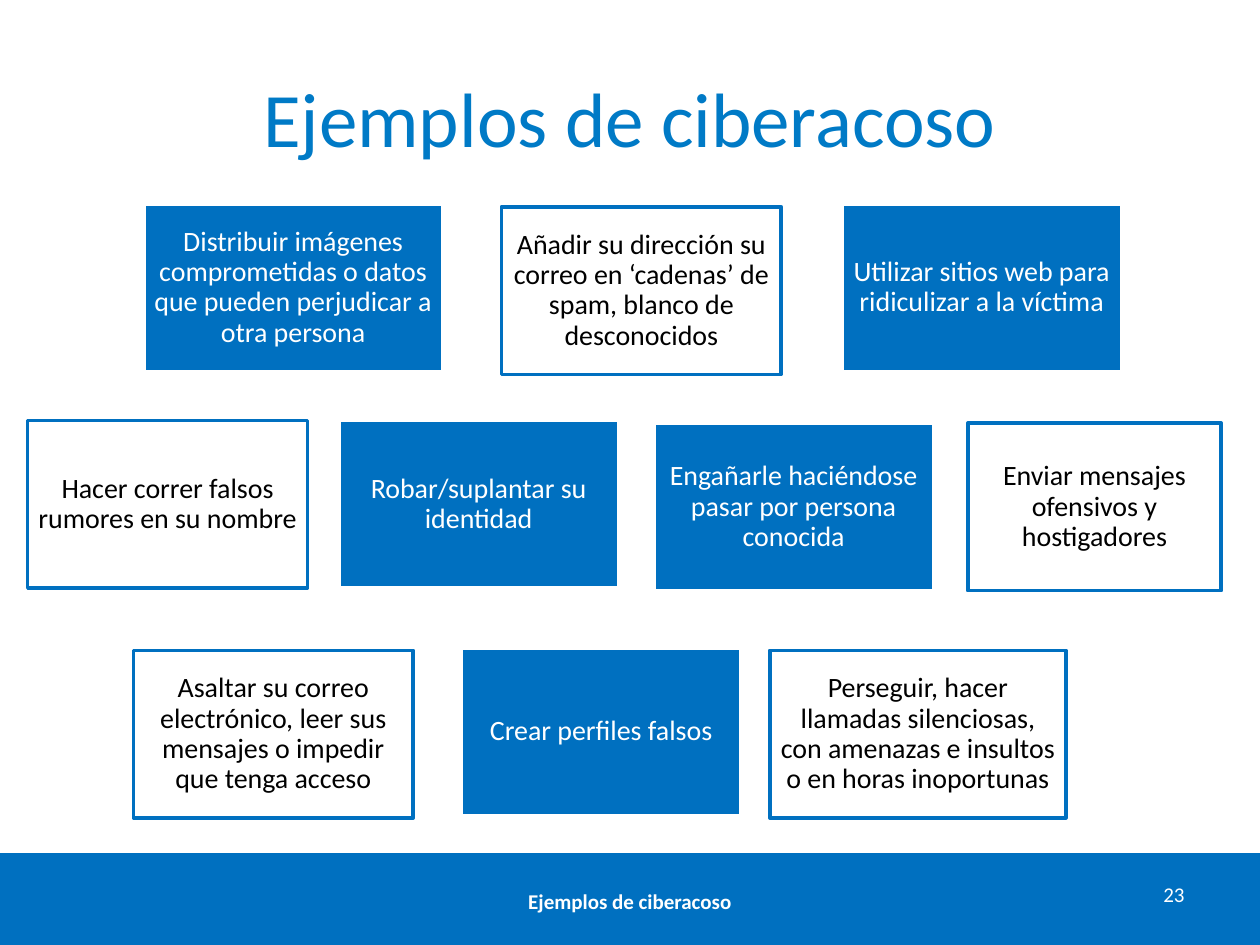
from pptx import Presentation
from pptx.dml.color import RGBColor
from pptx.enum.shapes import MSO_SHAPE as Shape
from pptx.enum.text import MSO_ANCHOR as Anchor, PP_ALIGN as Align
from pptx.util import Cm, Pt

COLORS = {"blue": "0070C0", "title": "007AC6", "white": "FFFFFF", "black": "000000"}
FONT = "Calibri"
CARD_HEIGHT = 3.38
CARD_WIDTH = 5.64

# Each card: left, top, width (cm), filled, text
CARDS = [
    (2.9, 4.11, 6.02, True,
     "Distribuir imágenes comprometidas o datos que pueden perjudicar a otra persona"),
    (10.11, 4.17, CARD_WIDTH, False,
     "Añadir su dirección su correo en ‘cadenas’ de spam, blanco de desconocidos"),
    (16.97, 4.11, CARD_WIDTH, True, "Utilizar sitios web para ridiculizar a la víctima"),
    (0.56, 8.48, CARD_WIDTH, False, "Hacer correr falsos rumores en su nombre"),
    (6.83, 8.48, CARD_WIDTH, True, "Robar/suplantar su identidad"),
    (13.18, 8.53, CARD_WIDTH, True, "Engañarle haciéndose pasar por persona conocida"),
    (19.51, 8.53, 5.11, False, "Enviar mensajes ofensivos y hostigadores"),
    (2.69, 13.11, CARD_WIDTH, False,
     "Asaltar su correo electrónico, leer sus mensajes o impedir que tenga acceso"),
    (9.3, 13.06, CARD_WIDTH, True, "Crear perfiles falsos"),
    (15.52, 13.11, 5.97, False,
     "Perseguir, hacer llamadas silenciosas, con amenazas e insultos o en horas inoportunas"),
]


def rgb(name):
    return RGBColor.from_string(COLORS[name])


def write(shape, text, size=16, color="white", bold=False, align=Align.CENTER,
          anchor=Anchor.MIDDLE, spacing=None, inset=None):
    frame = shape.text_frame
    frame.word_wrap = True
    frame.vertical_anchor = anchor
    if inset is not None:
        frame.margin_left = frame.margin_right = Cm(inset)
        frame.margin_top = frame.margin_bottom = Cm(inset)
    paragraph = frame.paragraphs[0]
    paragraph.text = text
    paragraph.alignment = align
    if spacing:
        paragraph.line_spacing = spacing
    font = paragraph.font
    font.name, font.size, font.bold = FONT, Pt(size), bold
    font.color.rgb = rgb(color)


def add_label(slide, left, top, width, height, text, **style):
    label = slide.shapes.add_textbox(Cm(left), Cm(top), Cm(width), Cm(height))
    write(label, text, **style)


def add_box(slide, left, top, width, height, fill, line=None):
    box = slide.shapes.add_shape(Shape.RECTANGLE, Cm(left), Cm(top), Cm(width), Cm(height))
    box.shadow.inherit = False
    box.fill.solid()
    box.fill.fore_color.rgb = rgb(fill)
    if line:
        box.line.color.rgb = rgb(line)
        box.line.width = Pt(2)
    else:
        box.line.fill.background()
    return box


def add_card(slide, left, top, width, filled, text):
    fill, line, color = ("blue", "white", "white") if filled else ("white", "blue", "black")
    card = add_box(slide, left, top, width, CARD_HEIGHT, fill, line)
    write(card, text, color=color, spacing=0.9, inset=0.15)


def main():
    deck = Presentation()
    deck.slide_width, deck.slide_height = Cm(25.4), Cm(19.05)
    slide = deck.slides.add_slide(deck.slide_layouts[6])

    # Footer band and title
    add_box(slide, 0, 17.2, 25.4, 1.93, "blue")
    add_label(slide, 1.27, 0.76, 22.86, 3.18, "Ejemplos de ciberacoso",
              size=44, color="title")

    # Example cards
    for card in CARDS:
        add_card(slide, *card)

    # Footer text and page number
    add_label(slide, 8.1, 17.65, 9.2, 1.02, "Ejemplos de ciberacoso", size=12, bold=True)
    add_label(slide, 18.21, 17.65, 5.92, 1.02, "23", size=12,
              align=Align.RIGHT, anchor=Anchor.TOP)

    deck.save("out.pptx")


if __name__ == "__main__":
    main()
